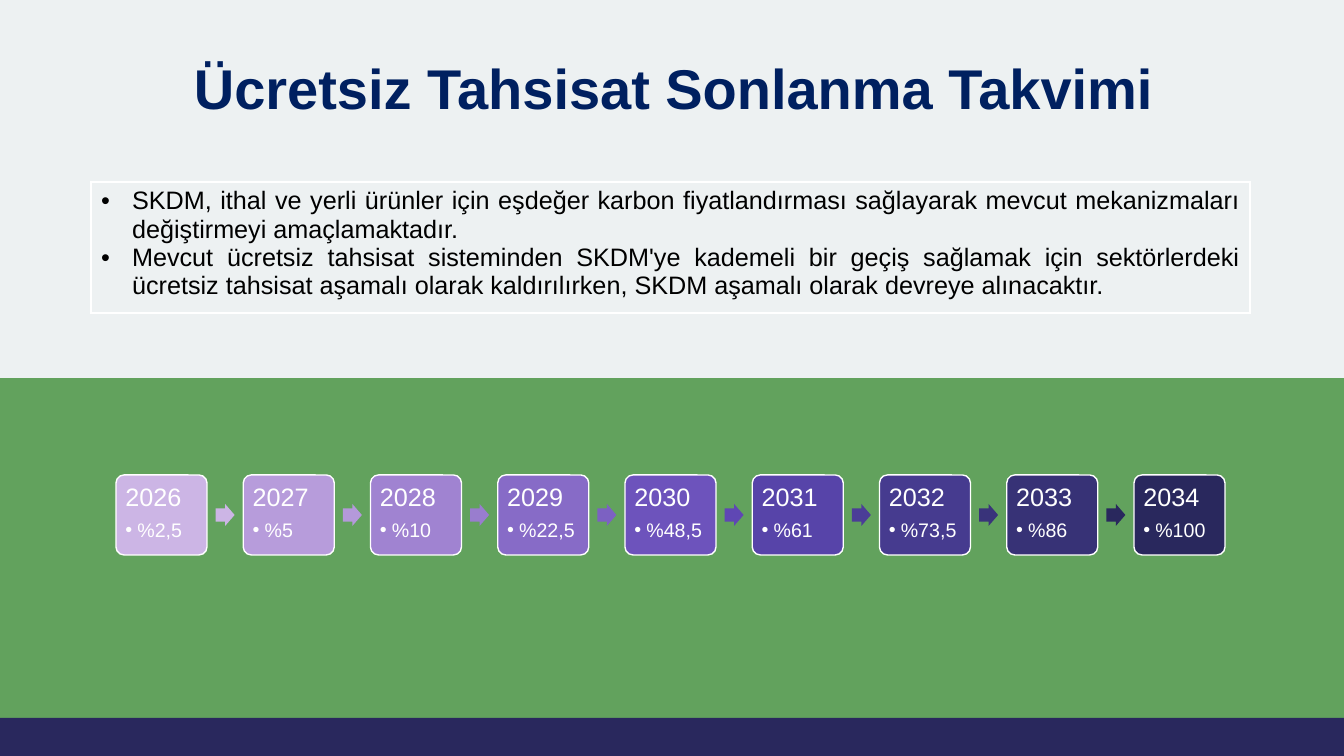
from lxml.etree import SubElement
from pptx import Presentation
from pptx.dml.color import RGBColor
from pptx.enum.shapes import MSO_SHAPE as Shape
from pptx.enum.text import MSO_ANCHOR as Anchor, PP_ALIGN as Align
from pptx.oxml.ns import qn
from pptx.util import Pt

EMU_PER_PX = 12192000 / 1344
WIDTH, HEIGHT = 1344, 756
FONT = "Arial"

PALE = RGBColor(0xED, 0xF1, 0xF2)
GREEN = RGBColor(0x62, 0xA2, 0x5D)
INDIGO = RGBColor(0x29, 0x28, 0x5D)
NAVY = RGBColor(0x00, 0x20, 0x60)
BLACK = RGBColor(0x00, 0x00, 0x00)
WHITE = RGBColor(0xFF, 0xFF, 0xFF)
CARD_COLORS = [
    RGBColor(0xCC, 0xB5, 0xE5), RGBColor(0xB7, 0x9C, 0xDB), RGBColor(0xA0, 0x83, 0xD1),
    RGBColor(0x87, 0x6B, 0xC7), RGBColor(0x6D, 0x53, 0xBC), RGBColor(0x57, 0x44, 0xA9),
    RGBColor(0x46, 0x3B, 0x8F), RGBColor(0x37, 0x32, 0x76), INDIGO,
]
ARROW_COLORS = [
    RGBColor(0xCC, 0xB5, 0xE5), RGBColor(0xB4, 0x99, 0xDA), RGBColor(0x99, 0x7D, 0xCE),
    RGBColor(0x7C, 0x61, 0xC2), RGBColor(0x5F, 0x47, 0xB4), RGBColor(0x4B, 0x3D, 0x97),
    RGBColor(0x39, 0x33, 0x7A), INDIGO,
]

TITLE = "Ücretsiz Tahsisat Sonlanma Takvimi"
POINTS = [
    "SKDM, ithal ve yerli ürünler için eşdeğer karbon fiyatlandırması sağlayarak "
    "mevcut mekanizmaları değiştirmeyi amaçlamaktadır.",
    "Mevcut ücretsiz tahsisat sisteminden SKDM'ye kademeli bir geçiş sağlamak için "
    "sektörlerdeki ücretsiz tahsisat aşamalı olarak kaldırılırken, SKDM aşamalı olarak "
    "devreye alınacaktır.",
]
FIRST_YEAR = 2026
RATES = ["%2,5", "%5", "%10", "%22,5", "%48,5", "%61", "%73,5", "%86", "%100"]


def px(length):
    """Turn pixels into EMU."""
    return round(length * EMU_PER_PX)


def place(*box):
    """Turn a pixel box into EMU."""
    return [px(length) for length in box]


def set_font(paragraph, size, color, bold=False):
    """Set the font of a whole paragraph."""
    font = paragraph.font
    font.name, font.size, font.bold = FONT, Pt(size), bold
    font.color.rgb = color


def add_bullet(paragraph, indent):
    """Give a paragraph a hanging bullet."""
    properties = paragraph._p.get_or_add_pPr()
    properties.set("marL", str(px(indent)))
    properties.set("indent", str(-px(indent)))
    SubElement(properties, qn("a:buFont"), typeface=FONT)
    SubElement(properties, qn("a:buChar"), char="•")


def add_filled(slide, preset, box, color):
    """Add a flat shape without an outline."""
    shape = slide.shapes.add_shape(preset, *place(*box))
    shape.shadow.inherit = False
    shape.fill.solid()
    shape.fill.fore_color.rgb = color
    shape.line.fill.background()
    return shape


def add_backdrop(slide, left, top, width, height):
    """Fill the background, the lower half and the footer strip."""
    footer = 38
    slide.background.fill.solid()
    slide.background.fill.fore_color.rgb = PALE
    add_filled(slide, Shape.RECTANGLE, (left, top + height / 2, width, height / 2), GREEN)
    add_filled(slide, Shape.RECTANGLE, (left, top + height - footer, width, footer), INDIGO)


def add_title(slide, left, top, width, height):
    """Write the slide title."""
    frame = slide.shapes.add_textbox(*place(left, top, width, height)).text_frame
    frame.word_wrap = True
    frame.vertical_anchor = Anchor.MIDDLE
    heading = frame.paragraphs[0]
    heading.text = TITLE
    heading.line_spacing = 0.9
    set_font(heading, 40, NAVY, bold=True)


def add_points(slide, left, top, width, height):
    """Write the explanatory points in a one-cell table."""
    table = slide.shapes.add_table(1, 1, *place(left, top, width, height)).table
    table.first_row = table.horz_banding = False
    cell = table.cell(0, 0)
    cell.fill.background()
    cell.text = "\n".join(POINTS)
    for point in cell.text_frame.paragraphs:
        point.alignment = Align.JUSTIFY
        add_bullet(point, 31)
        set_font(point, 18, BLACK)


def add_card(slide, box, year, rate, color):
    """Add one year card with its rate."""
    card = add_filled(slide, Shape.ROUNDED_RECTANGLE, box, color)
    card.adjustments[0] = 0.1
    card.line.color.rgb = WHITE
    card.line.width = Pt(1)
    frame = card.text_frame
    frame.word_wrap = True
    frame.vertical_anchor = Anchor.TOP
    frame.margin_left = frame.margin_top = frame.margin_right = frame.margin_bottom = px(7)
    frame.text = f"{year}\n{rate}"
    for line, size, after in zip(frame.paragraphs, (18, 14), (6.3, 2.1)):
        line.alignment = Align.LEFT
        line.line_spacing = 0.9
        line.space_after = Pt(after)
        set_font(line, size, WHITE)
    rate_line = frame.paragraphs[1]
    rate_line.level = 1
    add_bullet(rate_line, 12)


def add_timeline(slide, left, top, width, height):
    """Lay out the year cards with arrows centred in the gaps."""
    card_width, arrow_width, arrow_height = 91, 19, 22
    pitch = (width - card_width) / (len(RATES) - 1)
    arrow_left = (pitch + card_width - arrow_width) / 2
    arrow_top = top + (height - arrow_height) / 2
    for index, (rate, color) in enumerate(zip(RATES, CARD_COLORS)):
        x = left + index * pitch
        add_card(slide, (x, top, card_width, height), FIRST_YEAR + index, rate, color)
        if index < len(ARROW_COLORS):
            arrow_box = (x + arrow_left, arrow_top, arrow_width, arrow_height)
            arrow = add_filled(slide, Shape.RIGHT_ARROW, arrow_box, ARROW_COLORS[index])
            arrow.adjustments[0] = 0.6


def main():
    """Build and save the slide."""
    presentation = Presentation()
    presentation.slide_width, presentation.slide_height = place(WIDTH, HEIGHT)
    slide = presentation.slides.add_slide(presentation.slide_layouts[6])
    add_backdrop(slide, 0, 0, WIDTH, HEIGHT)
    add_title(slide, 184, 23, 1159, 137)
    add_timeline(slide, 116, 475, 1109, 80)
    add_points(slide, 91, 182, 1159, 131)
    presentation.save("out.pptx")


if __name__ == "__main__":
    main()
